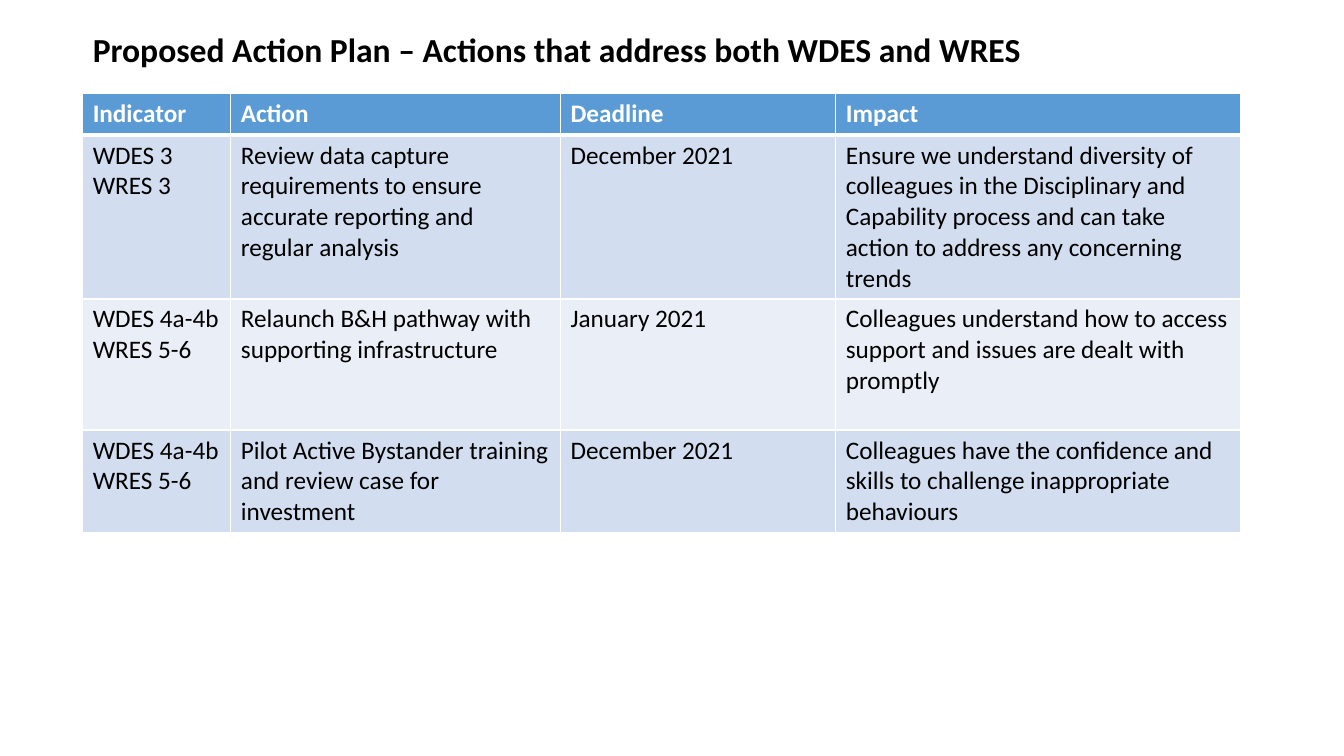
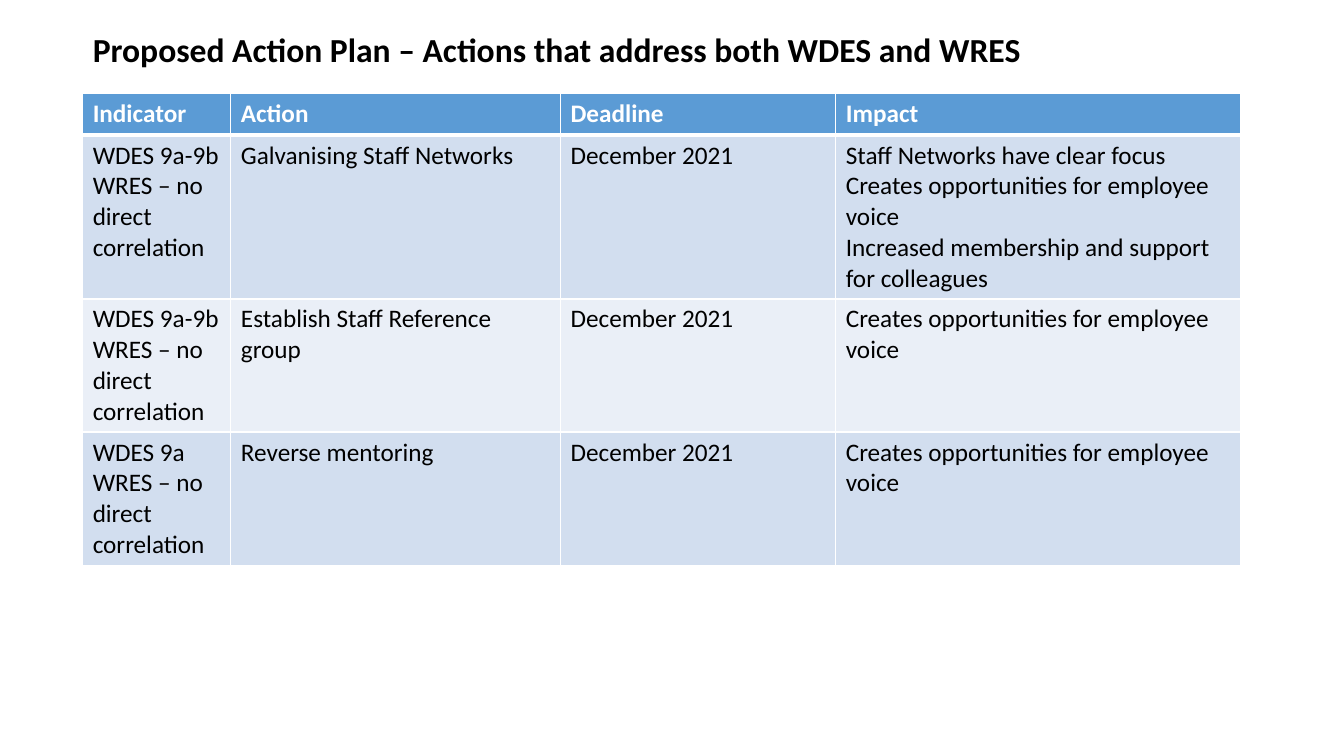
from lxml import etree
from pptx import Presentation
from pptx.dml.color import RGBColor
from pptx.enum.text import MSO_ANCHOR, PP_ALIGN
from pptx.oxml.ns import qn
from pptx.util import Inches, Pt

LEFT = PP_ALIGN.LEFT
TOP = MSO_ANCHOR.TOP
FONT = "Calibri"
BLACK = "000000"
WHITE = "FFFFFF"
HEADER_FILL = "5B9BD5"
BAND_FILLS = ["D2DEEF", "EAEFF7"]
TITLE_ONLY = 5

TITLE = "Proposed Action Plan – Actions that address both WDES and WRES"
HEADINGS = ["Indicator", "Action", "Deadline", "Impact"]
COLUMN_WIDTHS = [1.47, 3.27, 2.73, 4.02]
NO_CORRELATION = "WRES – no direct correlation"
EMPLOYEE_VOICE = "Creates opportunities for employee voice"

PLANS = [
    {
        "heights": [0.41, 1.6, 1.3, 1.0],
        "actions": [
            ["WDES 3\nWRES 3",
             "Review data capture requirements to ensure accurate reporting and regular analysis",
             "December 2021",
             "Ensure we understand diversity of colleagues in the Disciplinary and Capability "
             "process and can take action to address any concerning trends"],
            ["WDES 4a-4b\nWRES 5-6",
             "Relaunch B&H pathway with supporting infrastructure",
             "January 2021",
             "Colleagues understand how to access support and issues are dealt with promptly"],
            ["WDES 4a-4b\nWRES 5-6",
             "Pilot Active Bystander training and review case for investment",
             "December 2021",
             "Colleagues have the confidence and skills to challenge inappropriate behaviours"],
        ],
    },
    {
        "heights": [0.41, 1.6, 1.3, 1.3],
        "actions": [
            [f"WDES 9a-9b\n{NO_CORRELATION}",
             "Galvanising Staff Networks",
             "December 2021",
             f"Staff Networks have clear focus\n{EMPLOYEE_VOICE}\n"
             "Increased membership and support for colleagues"],
            [f"WDES 9a-9b\n{NO_CORRELATION}",
             "Establish Staff Reference group",
             "December 2021",
             EMPLOYEE_VOICE],
            [f"WDES 9a\n{NO_CORRELATION}",
             "Reverse mentoring",
             "December 2021",
             EMPLOYEE_VOICE],
        ],
    },
]


def write(frame, text, size=18, color=BLACK, bold=False):
    frame.text = text
    frame.word_wrap = True
    for para in frame.paragraphs:
        para.alignment = LEFT
        para.font.name = FONT
        para.font.size = Pt(size)
        para.font.bold = bold
        para.font.color.rgb = RGBColor.from_string(color)


def add_borders(cell, **widths):
    properties = cell._tc.get_or_add_tcPr()
    for side in "LRTB":
        line = etree.SubElement(properties, qn(f"a:ln{side}"), w=str(Pt(widths.get(side, 1))))
        fill = etree.SubElement(line, qn("a:solidFill"))
        etree.SubElement(fill, qn("a:srgbClr"), val=WHITE)


deck = Presentation()
deck.slide_width = Inches(13.33)
deck.slide_height = Inches(7.5)

for plan in PLANS:
    page = deck.slides.add_slide(deck.slide_layouts[TITLE_ONLY])
    title = page.shapes.title
    title.left, title.top = Inches(0.82), Inches(0.24)
    title.width, title.height = Inches(9.6), Inches(0.5)
    title.text_frame.vertical_anchor = TOP
    write(title.text_frame, TITLE, size=24, bold=True)

    rows = [HEADINGS] + plan["actions"]
    table = page.shapes.add_table(
        len(rows), len(HEADINGS), Inches(0.82), Inches(0.93),
        Inches(sum(COLUMN_WIDTHS)), Inches(sum(plan["heights"]))).table
    for column, width in zip(table.columns, COLUMN_WIDTHS):
        column.width = Inches(width)

    for row_index, (texts, height) in enumerate(zip(rows, plan["heights"])):
        table.rows[row_index].height = Inches(height)
        is_header = row_index == 0
        fill_color = HEADER_FILL if is_header else BAND_FILLS[(row_index - 1) % 2]
        for column_index, text in enumerate(texts):
            cell = table.cell(row_index, column_index)
            add_borders(cell, T=3 if row_index == 1 else 1, B=3 if is_header else 1)
            cell.fill.solid()
            cell.fill.fore_color.rgb = RGBColor.from_string(fill_color)
            write(cell.text_frame, text, color=WHITE if is_header else BLACK, bold=is_header)

deck.save("out.pptx")
